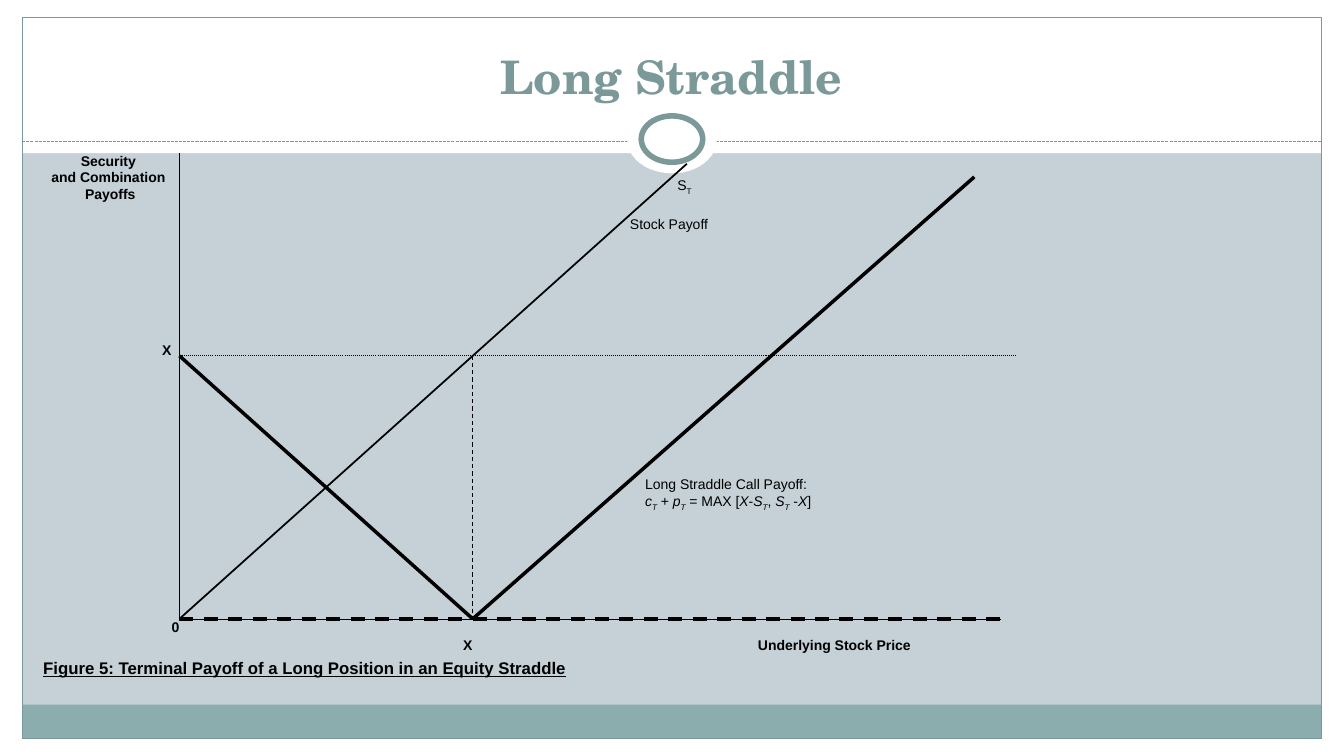
"""Build the Long Straddle payoff slide."""
from lxml import etree
from pptx import Presentation
from pptx import util as u
from pptx.dml.color import RGBColor
from pptx.enum import dml, shapes, text
from pptx.oxml.ns import qn

COLORS = {"ground": "C5D1D7", "white": "FFFFFF", "band": "8CADAE",
          "accent": "7C999A", "ink": "000000"}
RGB = {name: RGBColor.from_string(code) for name, code in COLORS.items()}
CELL = u.Inches(0.1)
COLS, ROWS = 133.33, 75
SIDE, TOP, BOTTOM = 2.2, 1.7, 73.3
INNER = COLS - 2 * SIDE
ORIGIN_X, ORIGIN_Y = 17.8, 61.4
STRIKE_W, STRIKE_H = 29.1, 26.1
MID = COLS / 2
LEFT, CENTER, RIGHT = text.PP_ALIGN.LEFT, text.PP_ALIGN.CENTER, text.PP_ALIGN.RIGHT
DASH = dml.MSO_LINE.DASH
DOT = dml.MSO_LINE.ROUND_DOT
SQUARE_DASH = dml.MSO_LINE.SQUARE_DOT


def add_line(start, end, width, color="ink", dash=None):
    ends = [int(v * CELL) for v in (*start, *end)]
    line = s.shapes.add_connector(shapes.MSO_CONNECTOR.STRAIGHT, *ends)
    line.line.color.rgb = RGB[color]
    line.line.width = u.Pt(width)
    if dash:
        line.line.dash_style = dash
    etree.SubElement(line._element.spPr, qn("a:effectLst"))


def add_text(box, paragraphs, align=LEFT, size=10, bold=False, color="ink",
             font="Arial", inset=0, anchor=text.MSO_ANCHOR.TOP, underline=None):
    tf = s.shapes.add_textbox(*[int(v * CELL) for v in box]).text_frame
    tf.word_wrap = True
    tf.vertical_anchor = anchor
    tf.margin_left = tf.margin_right = u.Inches(inset)
    tf.margin_top = tf.margin_bottom = u.Inches(inset / 2)
    for i, runs in enumerate(paragraphs):
        p = tf.paragraphs[0] if i == 0 else tf.add_paragraph()
        p.alignment = align
        for words, style in runs:
            r = p.add_run()
            r.text = words
            r.font.name, r.font.size, r.font.bold = font, u.Pt(size), bold
            r.font.color.rgb = RGB[color]
            r.font.underline = underline
            r.font.italic = "i" in style
            if "sub" in style:
                r._r.get_or_add_rPr().set("baseline", "-30000")


prs = Presentation()
prs.slide_width, prs.slide_height = int(COLS * CELL), ROWS * CELL
s = prs.slides.add_slide(prs.slide_layouts[6])
s.background.fill.solid()
s.background.fill.fore_color.rgb = RGB["ground"]

RECT, OVAL = shapes.MSO_SHAPE.RECTANGLE, shapes.MSO_SHAPE.OVAL
frame = [
    (RECT, (0, BOTTOM, COLS, TOP), "white", 0),
    (RECT, (0, 0, COLS, 15.2), "white", 0),
    (RECT, (0, 0, SIDE, ROWS), "white", 0),
    (RECT, (COLS - SIDE, 0, SIDE, ROWS), "white", 0),
    (RECT, (SIDE, 69.9, INNER, 3.4), "band", 0),
    (RECT, (SIDE, TOP, INNER, BOTTOM - TOP), None, 0.75),
    (OVAL, (MID - 4.45, 10.5, 8.9, 6.7), "white", 0),
    (OVAL, (MID - 3.05, 11.5, 6.1, 4.6), "white", 4),
]
for kind, box, fill, border in frame:
    if fill == "white" and kind == OVAL and not border:
        add_line((SIDE, 14), (COLS - SIDE, 14), 0.75, "accent", SQUARE_DASH)
    sp = s.shapes.add_shape(kind, *[int(v * CELL) for v in box])
    sp.shadow.inherit = False
    if fill:
        sp.fill.solid()
        sp.fill.fore_color.rgb = RGB[fill]
    else:
        sp.fill.background()
    if border:
        sp.line.color.rgb = RGB["accent"]
        sp.line.width = u.Pt(border)
    else:
        sp.line.fill.background()

add_text((4.4, 2.5, 124.4, 8.3), [[("Long Straddle", "")]], CENTER, 33, True,
         "accent", "TeX Gyre Schola", 0.1, text.MSO_ANCHOR.BOTTOM)

payoff_lines = [
    ((0, 1.77), (0, 0), 0.5, None),
    ((0, 0), (2.8, 0), 0.5, None),
    ((0, 0), (1, 1), 1.25, None),
    ((1, 0), (2.71, 1.68), 2.5, None),
    ((0, 1), (2.85, 1), 0.75, DOT),
    ((1, 1), (1, 0), 0.75, DASH),
    ((1, 1), (1.73, 1.73), 1.25, None),
    ((0, 0), (2.8, 0), 2.5, DASH),
    ((0, 1), (1, 0), 2.5, None),
]
for *ends, width, dash in payoff_lines:
    start, end = [(ORIGIN_X + price * STRIKE_W, ORIGIN_Y - payoff * STRIKE_H)
                  for price, payoff in ends]
    add_line(start, end, width, dash=dash)

formula = [("c", "i"), ("T", "i sub"), (" + ", ""), ("p", "i"), ("T", "i sub"),
           (" = MAX [", ""), ("X", "i"), ("-", ""), ("S", "i"), ("T", "i sub"),
           (", ", ""), ("S", "i"), ("T", "i sub"), (" -", ""), ("X", "i"), ("]", "")]
labels = [
    ((75.2, 63.1, 25.6, 2.8), [[("Underlying Stock Price", "")]], LEFT, True),
    ((3.7, 15.1, 14.1, 14), [[("Security", "")], [("and Combination", "")],
                             [(" Payoffs", "")]], CENTER, True),
    ((67.2, 17.5, 5.5, 3.9), [[("S", ""), ("T", "sub")]], LEFT, False),
    ((41.9, 63.1, 9, 2.8), [[("X", "")]], CENTER, True),
    ((9.3, 33.9, 7.7, 2.7), [[("X", "")]], RIGHT, True),
    ((64, 47.2, 42.3, 7.8), [[("Long Straddle Call Payoff:", "")], formula], LEFT, False),
    ((10.1, 61.4, 7.7, 2.7), [[("0", "")]], RIGHT, True),
    ((62.5, 21.4, 13.6, 3.9), [[("Stock Payoff", "")]], LEFT, False),
]
for box, paragraphs, align, bold in labels:
    add_text(box, paragraphs, align, bold=bold)

add_text((3.3, 64.8, 128, 3),
         [[("Figure 5: Terminal Payoff of a Long Position in an Equity Straddle", "")]],
         size=12, bold=True, inset=0.1, anchor=text.MSO_ANCHOR.MIDDLE, underline=True)

prs.save("out.pptx")
